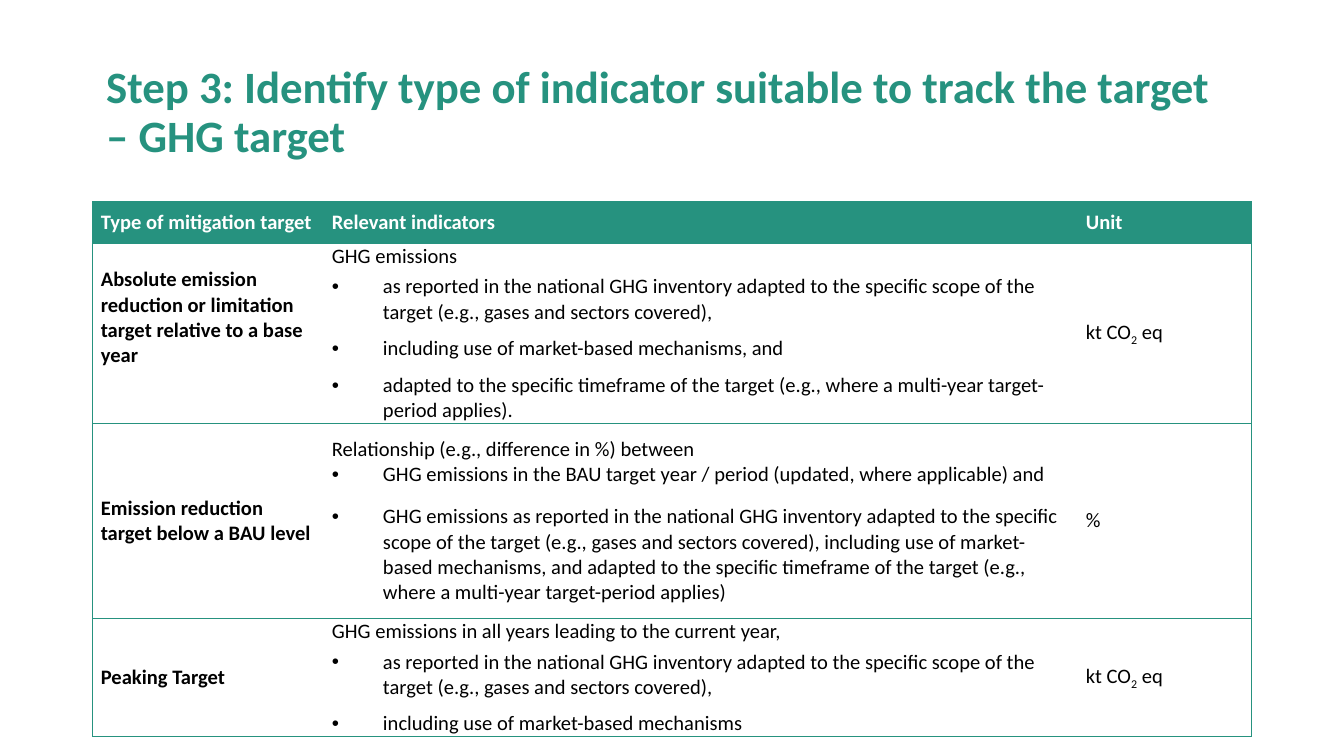
import pptx
import pptx.dml.color
import pptx.enum.text
import pptx.oxml
import pptx.oxml.ns
import pptx.util

COLORS = {"teal": "26927F", "white": "FFFFFF", "black": "000000"}
FONT = "Calibri"
WIDTH = 10
HEIGHT = WIDTH * 9 / 16
MARGIN = 0.69
COLUMNS = [1.72, 5.61, 1.29]
ROWS = [0.31, 1.14, 1.45, 0.79]
INDENT = 0.38

HEADERS = ["Type of mitigation target", "Relevant indicators", "Unit"]
REPORTED = ("as reported in the national GHG inventory adapted to the specific "
            "scope of the target (e.g., gases and sectors covered),")
CO2_UNIT = [("kt CO", 0), ("2", -25), (" eq", 0)]
EVEN = (3, 3)  # points before and after a bullet

# Each target: name, lead sentence, bullets with their spacing, unit runs
TARGETS = [
    ("Absolute emission reduction or limitation target relative to a base year",
     "GHG emissions",
     [(REPORTED, EVEN),
      ("including use of market-based mechanisms, and", EVEN),
      ("adapted to the specific timeframe of the target (e.g., where a "
       "multi-year target-period applies).", EVEN)],
     CO2_UNIT),
    ("Emission reduction target below a BAU level",
     "Relationship (e.g., difference in %) between",
     [("GHG emissions in the BAU target year / period (updated, where "
       "applicable) and", (0, 6)),
      ("GHG emissions " + REPORTED + " including use of market-based mechanisms, "
       "and adapted to the specific timeframe of the target (e.g., where a "
       "multi-year target-period applies)", EVEN)],
     [("%", 0)]),
    ("Peaking Target",
     "GHG emissions in all years leading to the current year,",
     [(REPORTED, EVEN), ("including use of market-based mechanisms", EVEN)],
     CO2_UNIT),
]


def inches(value):
    return pptx.util.Inches(value)


def add_bullet(paragraph):
    properties = paragraph._p.get_or_add_pPr()
    properties.set("marL", str(inches(INDENT)))
    properties.set("indent", str(-inches(INDENT)))
    for tag, name, value in (("a:buFont", "typeface", "Arial"),
                             ("a:buChar", "char", "•")):
        element = pptx.oxml.parse_xml(f"<{tag} {pptx.oxml.ns.nsdecls('a')}/>")
        element.set(name, value)
        properties.append(element)


def write_text(frame, text, size=11, color="black", bold=False, before=3,
               after=0, bullet=False, line_spacing=None):
    """Write one paragraph; text is a string or a list of (text, baseline %)."""
    paragraph = frame.paragraphs[0] if not frame.text else frame.add_paragraph()
    paragraph.alignment = pptx.enum.text.PP_ALIGN.LEFT
    paragraph.space_before = pptx.util.Pt(before)
    paragraph.space_after = pptx.util.Pt(after)
    if line_spacing:
        paragraph.line_spacing = line_spacing
    if bullet:
        add_bullet(paragraph)
    for part, baseline in ([(text, 0)] if isinstance(text, str) else text):
        run = paragraph.add_run()
        run.text = part
        run.font.name = FONT
        run.font.size = pptx.util.Pt(size)
        run.font.bold = bold
        run.font.color.rgb = pptx.dml.color.RGBColor.from_string(COLORS[color])
        if baseline:
            run._r.get_or_add_rPr().set("baseline", str(baseline * 1000))


def set_borders(cell, visible_sides):
    properties = cell._tc.get_or_add_tcPr()
    for side in "LRTB":
        fill = "<a:noFill/>"
        if side in visible_sides:
            fill = f'<a:solidFill><a:srgbClr val="{COLORS["teal"]}"/></a:solidFill>'
        properties.append(pptx.oxml.parse_xml(
            f'<a:ln{side} {pptx.oxml.ns.nsdecls("a")} w="6350">{fill}</a:ln{side}>'))


def format_cell(cell, column, fill):
    outer_side = {0: "L", len(COLUMNS) - 1: "R"}.get(column, "")
    set_borders(cell, "TB" + outer_side)
    cell.fill.solid()
    cell.fill.fore_color.rgb = pptx.dml.color.RGBColor.from_string(COLORS[fill])
    cell.vertical_anchor = pptx.enum.text.MSO_ANCHOR.MIDDLE
    cell.margin_left = cell.margin_right = inches(0.06)
    cell.margin_top = cell.margin_bottom = 0


def add_title(slide, text):
    title = slide.shapes.title
    title.left, title.top = inches(MARGIN), inches(0.3)
    title.width, title.height = inches(WIDTH - 2 * MARGIN), inches(1.09)
    frame = title.text_frame
    frame.word_wrap = True
    frame.auto_size = pptx.enum.text.MSO_AUTO_SIZE.NONE
    frame.vertical_anchor = pptx.enum.text.MSO_ANCHOR.MIDDLE
    write_text(frame, text, size=24, color="teal", bold=True, before=0,
               line_spacing=0.9)


def add_target_table(slide):
    table = slide.shapes.add_table(
        len(ROWS), len(COLUMNS), inches(MARGIN), inches(1.5),
        inches(sum(COLUMNS)), inches(sum(ROWS))).table
    table.horz_banding = False
    for column, width in zip(table.columns, COLUMNS):
        column.width = inches(width)
    for row, height in zip(table.rows, ROWS):
        row.height = inches(height)
    for row in range(len(ROWS)):
        for column in range(len(COLUMNS)):
            format_cell(table.cell(row, column), column,
                        "white" if row else "teal")

    # Header row
    for column, header in enumerate(HEADERS):
        write_text(table.cell(0, column).text_frame, header, color="white", bold=True)

    # One row per target
    for row, (name, lead, bullets, unit) in enumerate(TARGETS, start=1):
        target, indicators, units = (
            table.cell(row, column).text_frame for column in range(len(COLUMNS)))
        write_text(target, name, bold=True)
        write_text(indicators, lead)
        for text, (before, after) in bullets:
            write_text(indicators, text, before=before, after=after, bullet=True)
        write_text(units, unit)

    # The first target name sits a little above the middle of its row
    table.cell(1, 0).margin_bottom = inches(0.23)


def main():
    presentation = pptx.Presentation()
    presentation.slide_width = inches(WIDTH)
    presentation.slide_height = inches(HEIGHT)
    title_only = presentation.slide_layouts[5]
    slide = presentation.slides.add_slide(title_only)
    add_title(slide, "Step 3: Identify type of indicator suitable to track "
                     "the target – GHG target")
    add_target_table(slide)
    presentation.save("out.pptx")


if __name__ == "__main__":
    main()
